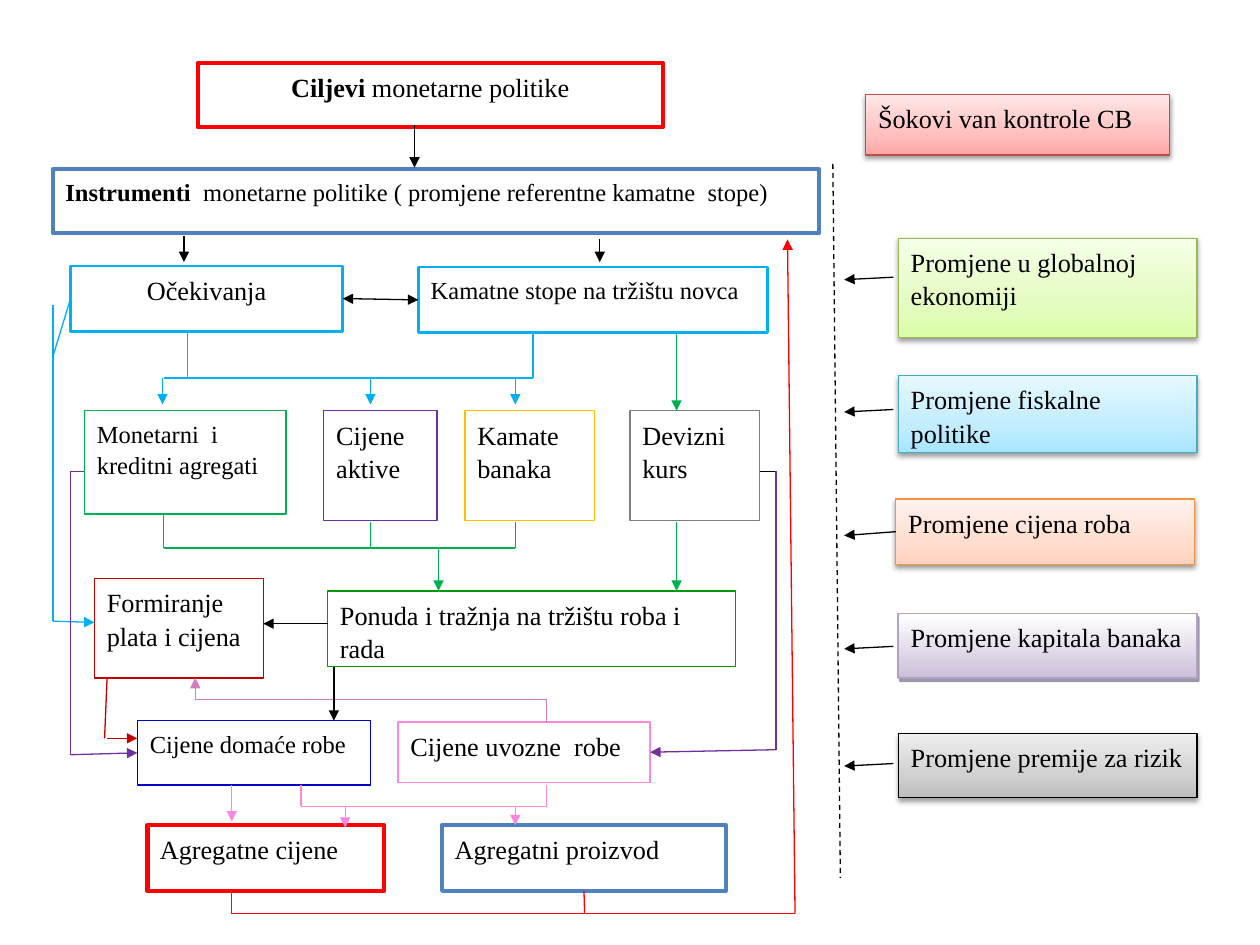
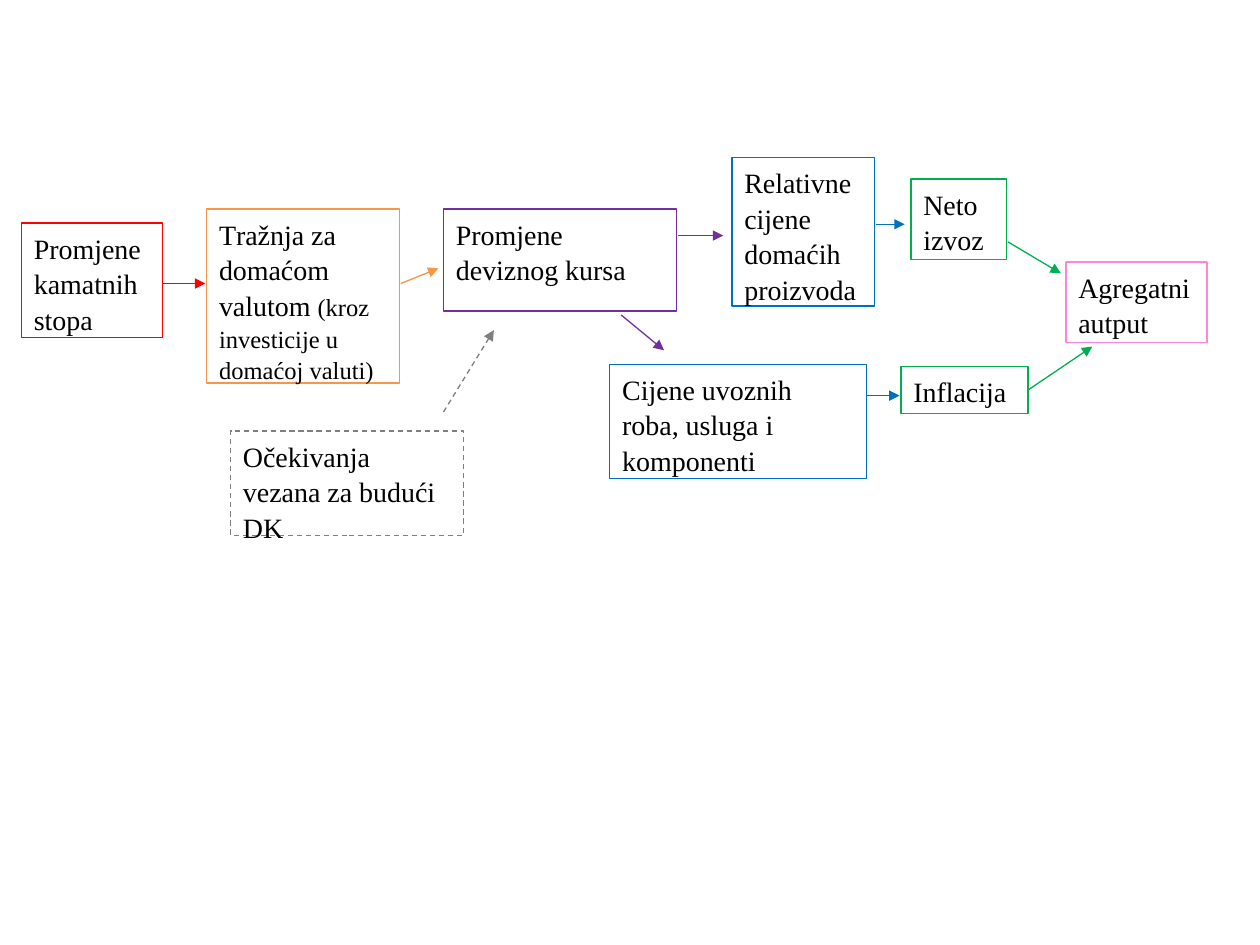
from lxml import etree
from pptx import Presentation
from pptx.dml.color import RGBColor
from pptx.enum import dml, shapes, text
from pptx.oxml import ns
from pptx.util import Inches, Pt

FONT = "Times New Roman"
BLACK, RED, BLUE, SKY = "000000", "FF0000", "4F81BD", "00B0F0"
GREEN, PURPLE, GREY, PINK = "00B050", "7030A0", "7F7F7F", "FD87DE"
CRIMSON, MAUVE, OCEAN, ORANGE = "C00000", "D37FBD", "0070C0", "F79646"
SOFT_SHADOW = (BLACK, 38, 3.1, 1.6, 90)


def rgb(value):
    return RGBColor.from_string(value)


def child(parent, tag, **attrs):
    """Add a DrawingML element with the given attributes."""
    el = etree.SubElement(parent, ns.qn("a:" + tag))
    for name, value in attrs.items():
        el.set(name, str(value))
    return el


def write(p, words, size=15, bold=False, color=BLACK):
    r = p.add_run()
    r.text = words
    r.font.name, r.font.size, r.font.bold = FONT, Pt(size), bold
    r.font.color.rgb = rgb(color)


class Diagram:
    """Style of the flow charts and the slide being drawn."""
    near = 0.021  # how close an end must be to a side's middle to be joined

    def __init__(self, prs, size):
        self.prs, self.size = prs, size
        self.new_slide()

    def new_slide(self, size=None):
        self.s = self.prs.slides.add_slide(self.prs.slide_layouts[6])
        self.size = size or self.size
        self.sites = []

    def box(self, x, y, w, h, words, color, width=0.75, size=None,
            center=False, dash=False):
        """White framed box; words is a string or a list of (text, format)."""
        sp = self.s.shapes.add_shape(shapes.MSO_SHAPE.RECTANGLE, Inches(x),
                                     Inches(y), Inches(w), Inches(h))
        sp.shadow.inherit = False
        sp.fill.solid()
        sp.fill.fore_color.rgb = rgb("FFFFFF")
        self.stroke(sp.line, color, width, dash)
        tf = sp.text_frame
        tf.word_wrap = True
        tf.vertical_anchor = text.MSO_ANCHOR.TOP
        p = tf.paragraphs[0]
        p.alignment = text.PP_ALIGN.CENTER if center else text.PP_ALIGN.LEFT
        p.line_spacing = 1.06
        runs = [(words, {})] if isinstance(words, str) else words
        for words, style in runs:
            write(p, words, **{"size": size or self.size, **style})
        middles = [(x + w / 2, y), (x, y + h / 2),
                   (x + w / 2, y + h), (x + w, y + h / 2)]
        self.sites += [(sp, i, mx, my) for i, (mx, my) in enumerate(middles)]
        return sp

    def shock(self, x, y, w, h, words, color, stops, angle=270, width=0.75,
              shadow=SOFT_SHADOW):
        """Box with a gradient fill and a shadow."""
        sp = self.box(x, y, w, h, words, color, width)
        sp.fill.gradient()
        sp.fill.gradient_angle = 360 - angle
        stop_list = sp._element.spPr.find(".//" + ns.qn("a:gsLst"))
        for old in list(stop_list):
            stop_list.remove(old)
        for pos, tint in stops:
            child(child(stop_list, "gs", pos=pos * 1000), "srgbClr", val=tint)
        tint, alpha, blur, dist, direction = shadow
        effects = sp._element.spPr.find(ns.qn("a:effectLst"))
        outer = child(effects, "outerShdw", blurRad=Pt(blur), dist=Pt(dist),
                      dir=direction * 60000, rotWithShape=0)
        child(child(outer, "srgbClr", val=tint), "alpha", val=alpha * 1000)

    def stroke(self, line, color, width, dash):
        line.color.rgb = rgb(color)
        line.width = Pt(width)
        if dash:
            line.dash_style = dml.MSO_LINE.DASH

    def join(self, connect, x, y):
        for sp, i, mx, my in self.sites:
            if abs(mx - x) < self.near and abs(my - y) < self.near:
                connect(sp, i)
                return

    def line(self, color, start, end, head=False, tail=False, dash=False):
        c = self.s.shapes.add_connector(
            shapes.MSO_CONNECTOR.STRAIGHT, *map(Inches, start + end))
        self.stroke(c.line, color, 0.75, dash)
        self.join(c.begin_connect, *start)
        self.join(c.end_connect, *end)
        ln = c.line._get_or_add_ln()
        for tag, wanted in (("headEnd", head), ("tailEnd", tail)):
            if wanted:
                child(ln, tag, type="triangle")
        child(c._element.spPr, "effectLst")

    def route(self, color, *points, arrow=False):
        """Chain of straight lines, with an arrowhead on the last if wanted."""
        last = len(points) - 2
        for i, (start, end) in enumerate(zip(points, points[1:])):
            self.line(color, start, end, tail=arrow and i == last)

    def arrow(self, color, start, end, **kw):
        self.line(color, start, end, tail=True, **kw)

    def drops(self, color, y, *stems, arrow=False):
        """Vertical lines from height y; each stem is (x, end height)."""
        for x, end in stems:
            self.line(color, (x, y), (x, end), tail=arrow)


def transmission_slide(d):
    # Goals, instruments and the money market
    d.box(1.57, 0.5, 3.69, 0.51, [("Ciljevi ", {"bold": True}),
          ("monetarne politike", {})], RED, 2.5, center=True)
    d.box(0.42, 1.34, 6.08, 0.51, [
        ("Instrumenti  ", {"bold": True}),
        ("monetarne politike ( promjene referentne kamatne  stope)", {})],
        BLUE, 2.5, size=14)
    d.box(3.32, 2.12, 2.77, 0.52, "Kamatne stope na tržištu novca", SKY, 1.5,
          size=14)
    d.box(0.56, 2.11, 2.16, 0.52, "Očekivanja", SKY, 1.5, center=True)

    # Channels
    d.box(0.67, 3.26, 1.6, 0.82, "Monetarni  i kreditni agregati", GREEN,
          size=14)
    for x, w, words, color in [(2.57, 0.9, "Cijene  aktive", PURPLE),
                               (3.69, 1.03, "Kamate banaka", "FFC000"),
                               (5, 1.03, "Devizni kurs", GREY)]:
        d.box(x, 3.26, w, 0.87, words, color)

    # Markets, prices and aggregates
    d.box(0.75, 4.59, 1.34, 0.79, "Formiranje plata i cijena", CRIMSON)
    d.box(2.6, 4.69, 3.24, 0.6, "Ponuda i tražnja na tržištu roba i rada",
          "009900")
    d.box(1.09, 5.72, 1.85, 0.51, "Cijene domaće robe", "0000CC", size=14)
    d.box(3.16, 5.73, 2, 0.48, "Cijene uvozne  robe", PINK, 1)
    d.box(1.17, 6.55, 1.88, 0.52, "Agregatne cijene", RED, 2.5)
    d.box(3.51, 6.55, 2.25, 0.52, "Agregatni proizvod", BLUE, 2.5)

    # Shocks outside central bank control
    def tints(*colors):
        return list(zip((0, 35, 100), colors))

    d.shock(6.87, 0.75, 2.41, 0.48, "Šokovi van kontrole CB", "BF4C48",
            tints("FFA6A5", "FFC0BF", "FFE7E7"))
    d.shock(7.13, 1.89, 2.37, 0.79, "Promjene u globalnoj ekonomiji",
            "98B955", tints("DAFDA7", "E4FCC2", "F5FFE7"))
    d.shock(7.13, 2.98, 2.37, 0.61, "Promjene fiskalne politike", "46AAC5",
            tints("A7E6FF", "C1EDFF", "E7F8FF"))
    d.shock(7.11, 3.96, 2.37, 0.52, "Promjene cijena roba", "F69240",
            tints("FFD2BD", "FFDED0", "FFF2ED"))
    d.shock(7.13, 4.87, 2.37, 0.51, "Promjene kapitala banaka", "B2A1C7",
            [(0, "FFFFFF"), (100, "CCC0D9")], angle=90, width=1,
            shadow=("3F3151", 50, 0, 2.2, 63))
    d.shock(7.13, 5.82, 2.37, 0.51, "Promjene premije za rizik", BLACK,
            tints("BDBDBD", "D1D1D1", "EEEEEE"))
    d.line(BLACK, (6.61, 1.3), (6.67, 6.97), dash=True)
    for y in (2.2, 3.25, 4.23, 5.13, 6.06):
        d.arrow(BLACK, (7.09, y), (6.7, y + 0.02))

    # From goals to the channels
    d.arrow(BLACK, (3.29, 0.99), (3.29, 1.33))
    d.arrow(BLACK, (4.76, 1.9), (4.76, 2.08))
    d.arrow(BLACK, (1.46, 1.87), (1.46, 2.08))
    d.arrow(BLACK, (2.72, 2.36), (3.32, 2.36), head=True)
    d.line(SKY, (1.3, 3), (4.23, 3))
    d.drops(SKY, 3, (1.49, 2.64), (4.23, 2.64))
    d.drops(SKY, 3, (1.29, 3.21), (2.94, 3.21), (4.09, 3.21), arrow=True)
    d.arrow(GREEN, (5.37, 2.64), (5.37, 3.26))

    # From the channels to the goods market
    d.line(GREEN, (1.3, 4.35), (4.09, 4.35))
    d.drops(GREEN, 4.35, (1.3, 4.08), (2.94, 4.14), (4.09, 4.14))
    d.arrow(GREEN, (3.48, 4.35), (3.48, 4.69))
    d.arrow(GREEN, (5.37, 4.14), (5.37, 4.69))

    # Expectations, wages and prices
    d.line(SKY, (0.42, 2.83), (0.56, 2.38))
    d.route(SKY, (0.42, 2.42), (0.42, 4.93), (0.75, 4.94), arrow=True)
    d.arrow(BLACK, (2.6, 4.95), (2.09, 4.95))
    d.line(BLACK, (6.03, 3.74), (6.16, 3.74))
    d.route(PURPLE, (6.16, 3.74), (6.16, 5.95), (5.16, 5.95), arrow=True)
    d.route(MAUVE, (4.34, 5.73), (4.34, 5.55), (1.55, 5.55), (1.55, 5.38),
            arrow=True)
    d.arrow(BLACK, (2.65, 5.29), (2.65, 5.72))
    d.route(PURPLE, (0.67, 3.74), (0.56, 3.74), (0.56, 5.99), (1.09, 5.99),
            arrow=True)
    d.line(CRIMSON, (0.85, 5.38), (0.83, 5.86))
    d.arrow(CRIMSON, (0.85, 5.86), (1.09, 5.86))

    # Aggregates and the way back to the instruments
    d.arrow(PINK, (1.84, 6.23), (1.84, 6.52))
    d.route(PINK, (2.39, 6.23), (2.39, 6.4), (4.34, 6.4), (4.34, 6.23))
    d.drops(PINK, 6.4, (2.74, 6.57), (4.09, 6.55), arrow=True)
    d.route(RED, (1.84, 7.07), (1.84, 7.25), (6.31, 7.25), (6.25, 1.9),
            arrow=True)
    d.line(RED, (4.64, 7.07), (4.64, 7.25))


def exchange_rate_slide(d):
    # Boxes
    d.box(0.17, 1.77, 1.12, 0.91, "Promjene kamatnih stopa", RED)
    d.box(1.64, 1.66, 1.53, 1.38, [
        ("Тražnja za domaćom valutom ", {}),
        ("(kroz investicije u domaćoj valuti)", {"size": 14})], ORANGE)
    d.box(3.52, 1.66, 1.85, 0.81, "Promjene deviznog kursa", PURPLE)
    d.box(1.83, 3.42, 1.85, 0.83, "Očekivanja vezana za budući DK", GREY,
          dash=True)
    d.box(5.81, 1.25, 1.13, 1.18, "Relativne cijene domaćih proizvoda", OCEAN)
    d.box(4.84, 2.89, 2.04, 0.91, "Cijene uvoznih roba, usluga i komponenti",
          OCEAN)
    d.box(7.23, 1.42, 0.76, 0.64, "Neto izvoz", GREEN)
    d.box(7.15, 2.91, 1.01, 0.37, "Inflacija", GREEN)
    d.box(8.46, 2.08, 1.12, 0.64, "Agregatni autput", PINK, 1)

    # Arrows
    for color, start, end in [
            (RED, (1.29, 2.25), (1.63, 2.25)),
            (ORANGE, (3.18, 2.25), (3.48, 2.13)),
            (PURPLE, (5.38, 1.87), (5.74, 1.87)),
            (PURPLE, (4.93, 2.5), (5.27, 2.78)),
            (OCEAN, (6.95, 1.78), (7.18, 1.78)),
            (OCEAN, (6.88, 3.14), (7.14, 3.14)),
            (GREEN, (8, 1.92), (8.42, 2.17)),
            (GREEN, (8.16, 3.09), (8.67, 2.75))]:
        d.arrow(color, start, end)
    d.arrow(GREY, (3.52, 3.27), (3.92, 2.62), dash=True)


def main():
    prs = Presentation()
    prs.slide_width, prs.slide_height = Inches(10), Inches(7.5)
    d = Diagram(prs, size=15)
    transmission_slide(d)
    d.new_slide(size=16)
    exchange_rate_slide(d)
    prs.save("out.pptx")


if __name__ == "__main__":
    main()
